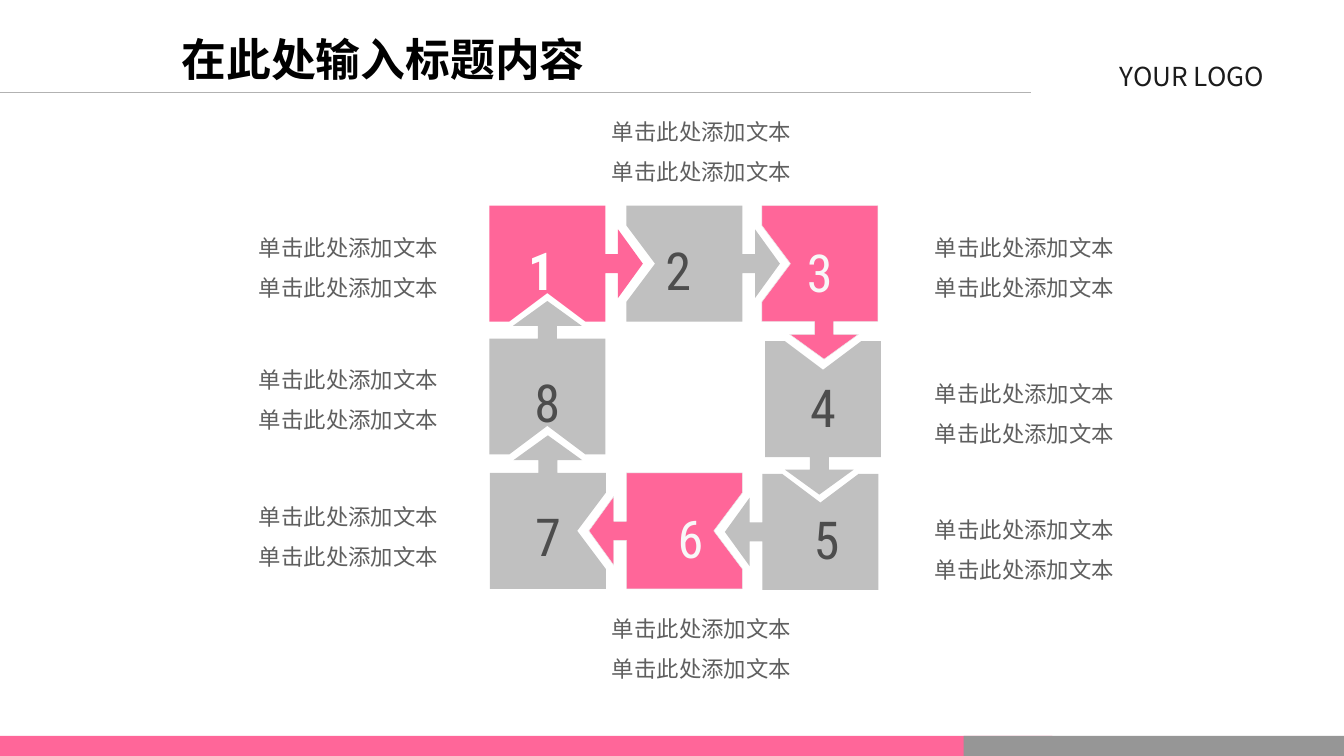
from typing import NamedTuple, Optional

import pptx
import pptx.dml.color
import pptx.enum.shapes
import pptx.enum.text
import pptx.oxml
import pptx.oxml.ns
import pptx.util

Cm = pptx.util.Cm
Pt = pptx.util.Pt
RGBColor = pptx.dml.color.RGBColor
ALIGN = pptx.enum.text.PP_ALIGN
ANCHOR = pptx.enum.text.MSO_ANCHOR
AUTO = pptx.enum.text.MSO_AUTO_SIZE

PINK = RGBColor(0xFF, 0x66, 0x99)
SILVER = RGBColor(0xC0, 0xC0, 0xC0)
RULE_GREY = RGBColor(0xB2, 0xB2, 0xB2)
BAR_GREY = RGBColor(0x96, 0x96, 0x96)
EDGE_GREY = RGBColor(0xEA, 0xEA, 0xEA)
BLACK = RGBColor(0, 0, 0)
LOGO_BLACK = RGBColor(0x1C, 0x1C, 0x1C)
LABEL_GREY = RGBColor(0x5F, 0x5F, 0x5F)
DIGIT_GREY = RGBColor(0x4D, 0x4D, 0x4D)
WHITE = RGBColor(0xFF, 0xFF, 0xFF)
OFF_WHITE = RGBColor(0xF8, 0xF8, 0xF8)

CJK = "Noto Sans CJK SC"
LABEL = "单击此处添加文本"

SIDE = 2.19
NOTCH = [(-0.72, 0), (0, -0.54), (0.72, 0)]
ARROW = [(-0.18, 0), (-0.18, 0.24), (-0.65, 0.24), (0, 0.71),
         (0.65, 0.24), (0.18, 0.24), (0.18, 0)]
DIRECTIONS = {"top": (1, 0), "right": (0, 1), "bottom": (-1, 0), "left": (0, -1)}


class Tile(NamedTuple):
    number: str
    left: float
    top: float
    notch: str
    arrow: str
    fill: RGBColor = SILVER
    color: RGBColor = DIGIT_GREY
    edge: Optional[RGBColor] = None
    bold: bool = False
    shift: float = 0


class Label(NamedTuple):
    left: float
    top: float
    align: ALIGN
    anchor: ANCHOR


TILES = [
    Tile("1", 9.25, 3.89, "bottom", "right", PINK, WHITE, bold=True),
    Tile("8", 9.25, 6.4, "bottom", "top"),
    Tile("7", 9.26, 8.94, "right", "top"),
    Tile("4", 14.46, 6.45, "top", "bottom", shift=0.07),
    Tile("6", 11.84, 8.94, "right", "left", PINK, OFF_WHITE, EDGE_GREY),
    Tile("2", 11.84, 3.89, "left", "right"),
    Tile("3", 14.4, 3.89, "left", "bottom", PINK, OFF_WHITE, EDGE_GREY, shift=-0.08),
    Tile("5", 14.41, 8.96, "top", "left"),
]

LABELS = [
    Label(4.57, 9.12, ALIGN.RIGHT, ANCHOR.MIDDLE),
    Label(4.57, 6.53, ALIGN.RIGHT, ANCHOR.MIDDLE),
    Label(4.57, 4.04, ALIGN.RIGHT, ANCHOR.MIDDLE),
    Label(11.28, 1.85, ALIGN.CENTER, ANCHOR.BOTTOM),
    Label(17.42, 4.04, ALIGN.LEFT, ANCHOR.MIDDLE),
    Label(17.42, 6.81, ALIGN.LEFT, ANCHOR.TOP),
    Label(17.42, 9.37, ALIGN.LEFT, ANCHOR.TOP),
    Label(11.28, 11.25, ALIGN.CENTER, ANCHOR.TOP),
]


def write(sp, text: str, *, size: float, font: str, color: RGBColor,
          bold: bool = False, align=ALIGN.CENTER, anchor=ANCHOR.TOP,
          spacing: float = 1.0, auto=AUTO.NONE) -> None:
    tf = sp.text_frame
    tf.word_wrap = True
    tf.auto_size = auto
    tf.vertical_anchor = anchor
    for i, line in enumerate(text.split("\n")):
        p = tf.add_paragraph() if i else tf.paragraphs[0]
        p.alignment = align
        p.line_spacing = spacing
        r = p.add_run()
        r.text = line
        r.font.size = Pt(size)
        r.font.bold = bold
        r.font.color.rgb = color
        r.font.name = font
        ea = pptx.oxml.parse_xml(
            f'<a:ea {pptx.oxml.ns.nsdecls("a")} typeface="{CJK}"/>')
        r.font._element.find(pptx.oxml.ns.qn("a:latin")).addnext(ea)


def paint(sp, fill: RGBColor, edge: Optional[RGBColor] = None) -> None:
    sp.shadow.inherit = False
    sp.fill.solid()
    sp.fill.fore_color.rgb = fill
    if edge is None:
        sp.line.fill.background()
    else:
        sp.line.color.rgb = edge
        sp.line.width = Pt(0.25)


def outline(tile: Tile) -> list[tuple[int, int]]:
    points = []
    cx, cy = tile.left + SIDE / 2, tile.top + SIDE / 2
    for side, (dx, dy) in DIRECTIONS.items():
        steps = [(-SIDE / 2, 0)]
        if side == tile.notch:
            steps += NOTCH
        if side == tile.arrow:
            steps += [(along + tile.shift, out) for along, out in ARROW]
        for along, out in steps:
            reach = SIDE / 2 + out
            points.append((Cm(cx + along * dx + reach * dy),
                           Cm(cy + along * dy - reach * dx)))
    return points


def add_tile(s, tile: Tile) -> None:
    start, *rest = outline(tile)
    builder = s.shapes.build_freeform(*start)
    builder.add_line_segments(rest, close=True)
    sp = builder.convert_to_shape()
    sp.name = f"Step {tile.number}"
    paint(sp, tile.fill, tile.edge)
    tf = sp.text_frame
    tf.margin_left = Cm(1.19 if tile.arrow == "left" else 0.25)
    tf.margin_right = Cm(1.19 if tile.arrow == "right" else 0.25)
    tf.margin_top = Cm(0.79 if tile.arrow == "top" else 0.13)
    tf.margin_bottom = Cm(0.79 if tile.arrow == "bottom" else 0.13)
    write(sp, tile.number, size=28, font="Roboto Condensed", color=tile.color,
          bold=tile.bold, anchor=ANCHOR.MIDDLE, spacing=1.2)


def add_label(s, label: Label) -> None:
    sp = s.shapes.add_textbox(Cm(label.left), Cm(label.top), Cm(3.96), Cm(1.78))
    write(sp, f"{LABEL}\n{LABEL}", size=12, font=CJK, color=LABEL_GREY,
          align=label.align, anchor=label.anchor, spacing=1.5,
          auto=AUTO.SHAPE_TO_FIT_TEXT)


def add_bar(s, left: float, width: float, fill: RGBColor) -> None:
    sp = s.shapes.add_shape(pptx.enum.shapes.MSO_SHAPE.RECTANGLE,
                            Cm(left), Cm(13.91), Cm(width), Cm(0.38))
    paint(sp, fill)


def add_rule(s) -> None:
    sp = s.shapes.add_connector(pptx.enum.shapes.MSO_CONNECTOR.STRAIGHT,
                                Cm(0), Cm(1.75), Cm(19.48), Cm(1.75))
    sp.line.color.rgb = RULE_GREY
    sp.line.width = Pt(0.75)
    sp._element.spPr.append(pptx.oxml.parse_xml(
        f'<a:effectLst {pptx.oxml.ns.nsdecls("a")}/>'))


def main() -> None:
    prs = pptx.Presentation()
    prs.slide_width, prs.slide_height = Cm(25.4), Cm(14.29)
    s = prs.slides.add_slide(prs.slide_layouts[5])

    title = s.shapes.title
    title.left, title.top = Cm(2.34), Cm(0.48)
    title.width, title.height = Cm(9.8), Cm(1.27)
    write(title, "在此处输入标题内容", size=24, font="Times New Roman",
          color=BLACK, bold=True, anchor=ANCHOR.MIDDLE)

    add_rule(s)
    logo = s.shapes.add_textbox(Cm(19.89), Cm(1.02), Cm(5.28), Cm(0.84))
    write(logo, "YOUR LOGO", size=14, font=CJK, color=LOGO_BLACK)
    add_bar(s, 0, 19.89, PINK)
    add_bar(s, 18.21, 7.19, BAR_GREY)

    for label in LABELS:
        add_label(s, label)
    for tile in TILES:
        add_tile(s, tile)

    prs.save("out.pptx")


if __name__ == "__main__":
    main()
